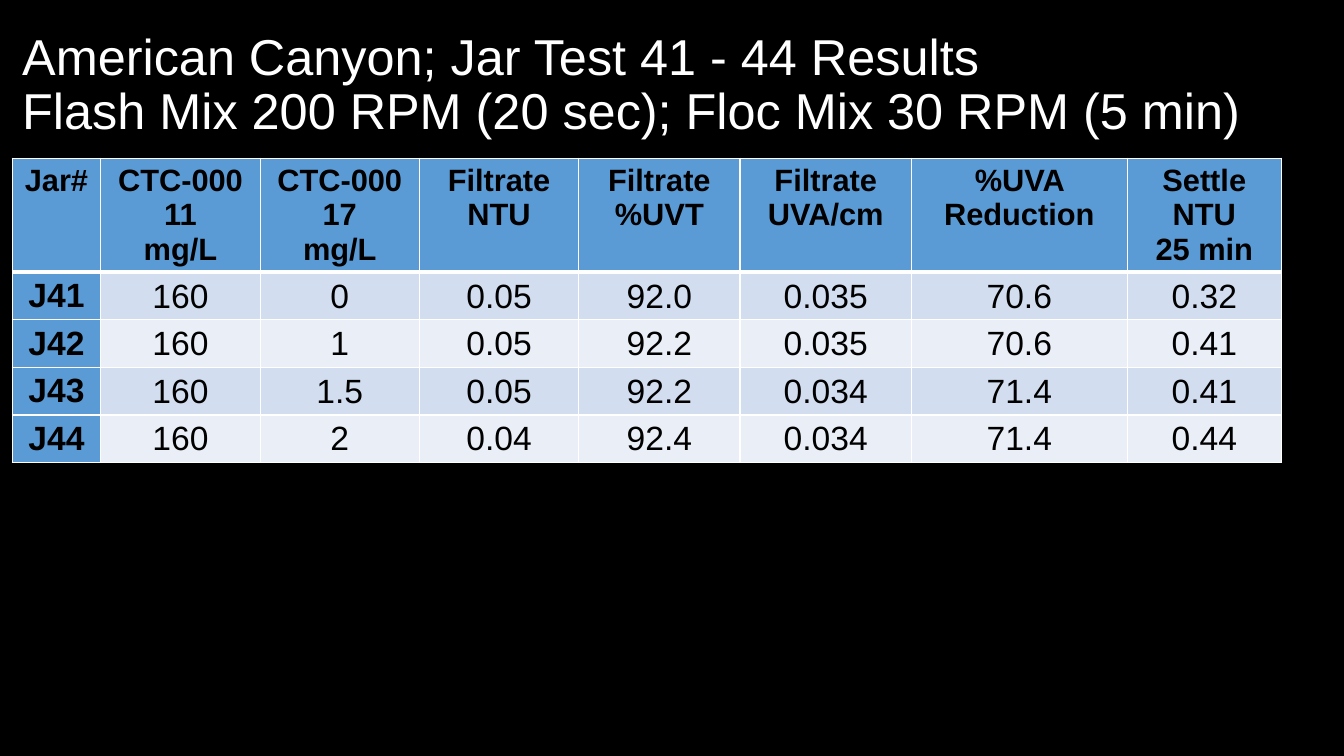
from copy import deepcopy

from lxml import etree
from pptx import Presentation
from pptx.dml.color import RGBColor
from pptx.enum.text import MSO_ANCHOR, PP_ALIGN
from pptx.oxml.ns import qn
from pptx.util import Inches, Pt

LEFT, CENTER = PP_ALIGN.LEFT, PP_ALIGN.CENTER
TOP, MIDDLE = MSO_ANCHOR.TOP, MSO_ANCHOR.MIDDLE
TITLE_ONLY = 5
FONT = "Arial"
COLORS = {
    "background": "000000",
    "title": "FFFFFF",
    "text": "000000",
    "header": "5B9BD5",
    "odd": "D2DEEF",
    "even": "EAEFF7",
    "border": "FFFFFF",
}

TITLE = ("American Canyon; Jar Test 41 - 44 Results\v"
         "Flash Mix 200 RPM (20 sec); Floc Mix 30 RPM (5 min)")
HEADERS = ["Jar#", "CTC-00011\nmg/L", "CTC-00017\nmg/L", "Filtrate\nNTU",
           "Filtrate\n%UVT", "Filtrate\nUVA/cm", "%UVA Reduction",
           "Settle\nNTU\n25 min"]
RESULTS = [
    ["J41", "160", "0", "0.05", "92.0", "0.035", "70.6", "0.32"],
    ["J42", "160", "1", "0.05", "92.2", "0.035", "70.6", "0.41"],
    ["J43", "160", "1.5", "0.05", "92.2", "0.034", "71.4", "0.41"],
    ["J44", "160", "2", "0.04", "92.4", "0.034", "71.4", "0.44"],
]
COL_WIDTHS = [0.88, 1.58, 1.58, 1.58, 1.6, 1.7, 2.14, 1.53]
HEADER_HEIGHT, ROW_HEIGHT = 1.13, 0.47


def rgb(name):
    return RGBColor.from_string(COLORS[name])


def write(tf, text, size=24, color="text", bold=False, align=CENTER, spacing=None):
    """Fill a text frame; newline starts a paragraph, \\v breaks a line."""
    tf.text = text
    for p in tf.paragraphs:
        p.alignment = align
        if spacing:
            p.line_spacing = spacing
        for r in p.runs:
            r.font.name = FONT
            r.font.size = Pt(size)
            r.font.bold = bold
            r.font.color.rgb = rgb(color)
        for br in p._p.findall(qn("a:br")):
            br.append(deepcopy(p.runs[0]._r.rPr))


def set_borders(cell, bottom=1):
    """Draw the four cell borders; they must come before the fill."""
    tcPr = cell._tc.get_or_add_tcPr()
    widths = {"a:lnL": 1, "a:lnR": 1, "a:lnT": 1, "a:lnB": bottom}
    for i, (tag, width) in enumerate(widths.items()):
        ln = etree.Element(qn(tag), w=str(Pt(width)))
        fill = etree.SubElement(ln, qn("a:solidFill"))
        etree.SubElement(fill, qn("a:srgbClr"), val=COLORS["border"])
        tcPr.insert(i, ln)


class SlideBuilder:
    def __init__(self, prs):
        self.s = prs.slides.add_slide(prs.slide_layouts[TITLE_ONLY])
        fill = self.s.background.fill
        fill.solid()
        fill.fore_color.rgb = rgb("background")

    def title(self, text, left, top, width, height):
        sp = self.s.shapes.title
        sp.left, sp.top = Inches(left), Inches(top)
        sp.width, sp.height = Inches(width), Inches(height)
        tf = sp.text_frame
        tf.word_wrap = True
        tf.vertical_anchor = MIDDLE
        write(tf, text, size=36, color="title", align=LEFT, spacing=0.9)

    def cell(self, cell, text, row, col):
        heading = row == 0 or col == 0
        if heading:
            cell.vertical_anchor = TOP
        else:
            cell.vertical_anchor = MIDDLE
            cell.margin_left = cell.margin_right = cell.margin_top = Inches(0.01)
            cell.margin_bottom = 0
        write(cell.text_frame, text, size=24 if row else 22, bold=heading)
        cell.fill.solid()
        band = "odd" if row % 2 else "even"
        cell.fill.fore_color.rgb = rgb("header" if heading else band)
        set_borders(cell, bottom=1 if row else 3)

    def table(self, rows, left, top):
        height = HEADER_HEIGHT + ROW_HEIGHT * (len(rows) - 1)
        table = self.s.shapes.add_table(
            len(rows), len(COL_WIDTHS), Inches(left), Inches(top),
            Inches(sum(COL_WIDTHS)), Inches(height)).table
        table.first_col = True
        for column, width in zip(table.columns, COL_WIDTHS):
            column.width = Inches(width)
        for i, values in enumerate(rows):
            table.rows[i].height = Inches(ROW_HEIGHT if i else HEADER_HEIGHT)
            for j, text in enumerate(values):
                self.cell(table.cell(i, j), text, i, j)


def main():
    prs = Presentation()
    prs.slide_width, prs.slide_height = Inches(13.33), Inches(7.5)
    slide = SlideBuilder(prs)
    # Heading with the mixing conditions
    slide.title(TITLE, 0.12, 0.13, 13.03, 1.45)
    # Jar test results
    slide.table([HEADERS] + RESULTS, 0.12, 1.57)
    prs.save("out.pptx")


if __name__ == "__main__":
    main()
